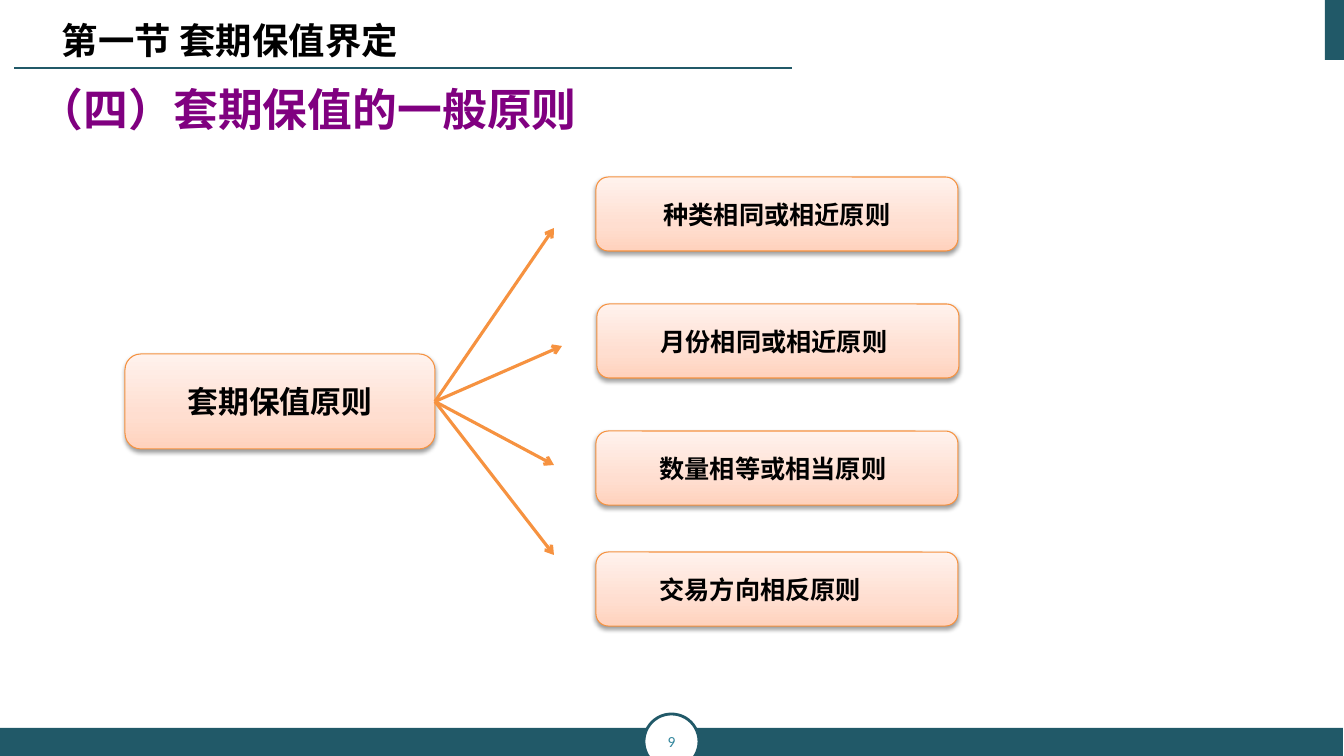
import pptx
import pptx.util
import pptx.dml.color
import pptx.enum.shapes
import pptx.enum.text
import pptx.oxml
import pptx.oxml.ns

RGBColor = pptx.dml.color.RGBColor
Shape = pptx.enum.shapes.MSO_SHAPE
Align = pptx.enum.text.PP_ALIGN
Anchor = pptx.enum.text.MSO_ANCHOR

TEAL = RGBColor(0x21, 0x59, 0x68)
AQUA = RGBColor(0x31, 0x85, 0x9C)
ORANGE = RGBColor(0xF6, 0x92, 0x40)
PURPLE = RGBColor(0x80, 0x00, 0x80)
BLACK = RGBColor(0, 0, 0)
WHITE = RGBColor(0xFF, 0xFF, 0xFF)
PEACH_STOPS = (
    (0, RGBColor(0xFF, 0xD2, 0xBD)),
    (35, RGBColor(0xFF, 0xDE, 0xD0)),
    (100, RGBColor(0xFF, 0xF2, 0xED)),
)
LATIN = "Calibri"
CHINESE = "Noto Sans CJK SC"
NAMESPACE = pptx.oxml.ns.nsdecls("a")


def px(length):
    """Turn px into EMU at 100.8 px to the inch."""
    return pptx.util.Emu(round(length * 914400 / 100.8))


class SlideBuilder:
    """Hold the style and the current slide, and draw its elements."""

    def __init__(self, deck):
        self.page = deck.slides.add_slide(deck.slide_layouts[6])

    def fill_text(self, frame, text, size, color, font=LATIN, bold=True, align=Align.LEFT, indent=0):
        """Put one styled paragraph into a text frame."""
        frame.word_wrap = True
        para = frame.paragraphs[0]
        para.text = text
        para.alignment = align
        properties = para._p.get_or_add_pPr()
        if indent:
            properties.set("marL", "0")
            properties.set("indent", str(px(indent)))
        para.font.size = pptx.util.Pt(size)
        para.font.bold = bold
        para.font.color.rgb = color
        para.font.name = font
        defaults = properties.find(pptx.oxml.ns.qn("a:defRPr"))
        defaults.append(pptx.oxml.parse_xml(f'<a:ea {NAMESPACE} typeface="{CHINESE}"/>'))

    def shape(self, kind, bounds, fill, line=None, width=1):
        """Add a flat preset shape."""
        shape = self.page.shapes.add_shape(kind, *map(px, bounds))
        shape.shadow.inherit = False
        shape.fill.solid()
        shape.fill.fore_color.rgb = fill
        if line is None:
            shape.line.fill.background()
        else:
            shape.line.color.rgb = line
            shape.line.width = pptx.util.Pt(width)
        shape.text_frame.vertical_anchor = Anchor.MIDDLE
        return shape

    def text(self, bounds, text, size, color):
        """Add a heading text box."""
        box = self.page.shapes.add_textbox(*map(px, bounds))
        self.fill_text(box.text_frame, text, size, color, font=CHINESE)

    def card(self, bounds, text, size, align=Align.CENTER, indent=0):
        """Add a rounded box with a peach gradient and a soft shadow."""
        card = self.shape(Shape.ROUNDED_RECTANGLE, bounds, WHITE, ORANGE, 0.75)
        stops = "".join(
            f'<a:gs pos="{position * 1000}"><a:srgbClr val="{color}"/></a:gs>'
            for position, color in PEACH_STOPS
        )
        gradient = pptx.oxml.parse_xml(
            f'<a:gradFill {NAMESPACE} rotWithShape="1"><a:gsLst>{stops}</a:gsLst>'
            '<a:lin ang="16200000" scaled="0"/></a:gradFill>'
        )
        properties = card._element.spPr
        properties.replace(properties.find(pptx.oxml.ns.qn("a:solidFill")), gradient)
        shadow = pptx.oxml.parse_xml(
            f'<a:outerShdw {NAMESPACE} blurRad="40000" dist="20000" dir="5400000" rotWithShape="0">'
            f'<a:srgbClr val="{BLACK}"><a:alpha val="38000"/></a:srgbClr></a:outerShdw>'
        )
        properties.find(pptx.oxml.ns.qn("a:effectLst")).append(shadow)
        self.fill_text(card.text_frame, text, size, BLACK, align=align, indent=indent)
        return card

    def line(self, start, end, color, width, arrow=False):
        """Add a straight line, with an arrowhead at its end if asked."""
        line = self.page.shapes.add_connector(
            pptx.enum.shapes.MSO_CONNECTOR.STRAIGHT, *map(px, start + end)
        )
        line.line.color.rgb = color
        line.line.width = pptx.util.Pt(width)
        if arrow:
            head = pptx.oxml.parse_xml(f'<a:tailEnd {NAMESPACE} type="arrow"/>')
            line.line._get_or_add_ln().append(head)
        line._element.spPr.append(pptx.oxml.parse_xml(f"<a:effectLst {NAMESPACE}/>"))
        return line


def main():
    """Build the slide on the principles of hedging."""
    deck = pptx.Presentation()
    deck.slide_width, deck.slide_height = px(1344), px(756)
    builder = SlideBuilder(deck)

    builder.shape(Shape.RECTANGLE, (1325, 0, 20, 60), TEAL)
    builder.shape(Shape.RECTANGLE, (0, 728, 1343, 28), TEAL)
    number = builder.shape(Shape.OVAL, (644, 714, 55, 55), WHITE, TEAL, 2)
    builder.fill_text(number.text_frame, "9", 11, AQUA, bold=False, align=Align.CENTER)
    builder.line((792, 68), (14, 68), TEAL, 1.5)
    builder.text((29, 77, 580, 66), "（四）套期保值的一般原则", 32, PURPLE)
    builder.text((52, 13, 445, 54), "第一节 套期保值界定", 26, BLACK)

    root = builder.card((125, 354, 310, 95), "套期保值原则", 22)
    for tip in ((554, 228), (562, 346), (554, 465), (554, 555)):
        arrow = builder.line((435, 402), tip, ORANGE, 2.25, arrow=True)
        arrow.begin_connect(root, 3)

    principles = (
        (596, 177, "种类相同或相近原则", Align.CENTER, 0),
        (597, 304, "月份相同或相近原则", Align.LEFT, 50),
        (596, 431, "数量相等或相当原则", Align.LEFT, 50),
        (596, 552, "交易方向相反原则", Align.LEFT, 50),
    )
    for left, top, name, align, indent in principles:
        builder.card((left, top, 362, 74), name, 18, align, indent)

    deck.save("out.pptx")


if __name__ == "__main__":
    main()
